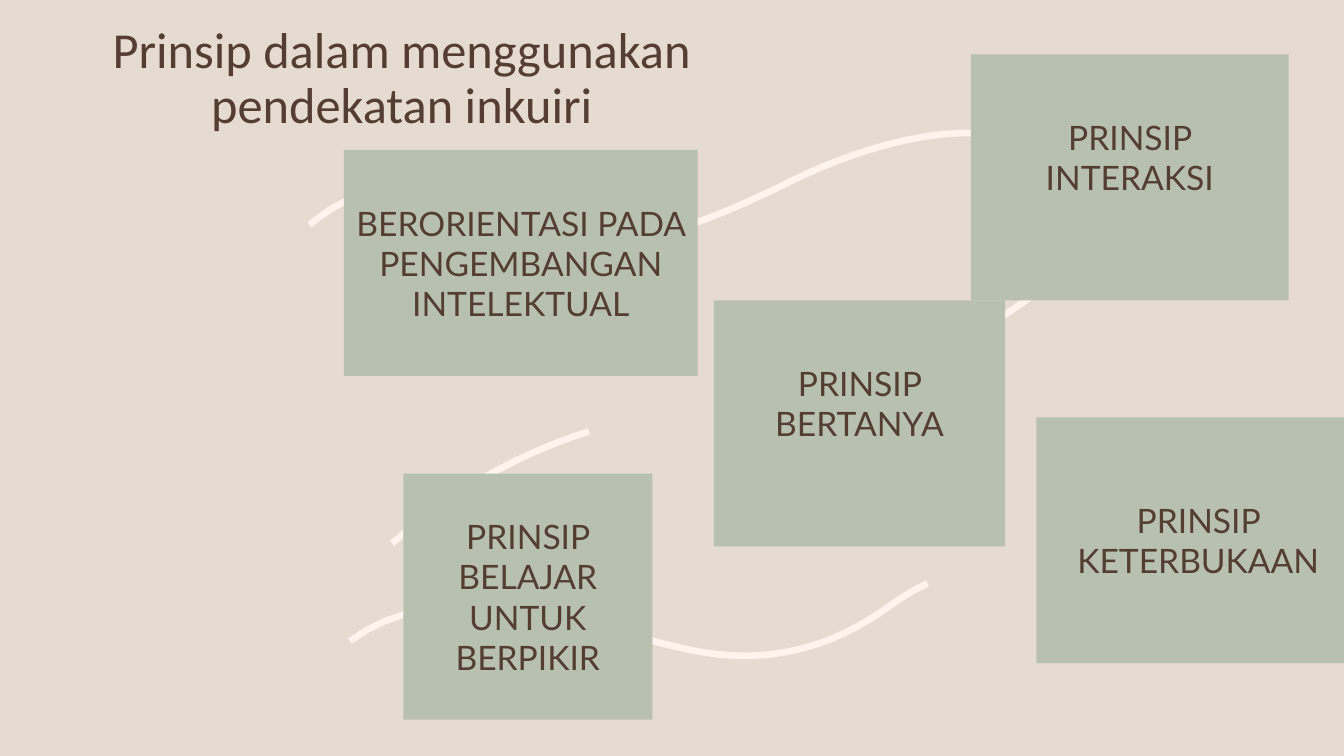
"""Build a slide of five inquiry principles on cards linked by flowing curves."""
from pptx import Presentation
from pptx.dml.color import RGBColor
from pptx.enum import shapes, text
from pptx.util import Inches, Pt

BACKGROUND, CURVE, CARD, INK = "E6DBD0", "FEF3ED", "B8C0B0", "543E34"
TITLE = "Prinsip dalam menggunakan pendekatan inkuiri"
TITLE_BOX = (0.34, 0, 7.29, 1.58)

CARDS = [
    ("BERORIENTASI PADA PENGEMBANGAN INTELEKTUAL", (3.41, 1.49, 3.51, 2.24), False),
    ("PRINSIP INTERAKSI", (9.63, 0.54, 3.15, 2.44), True),
    ("PRINSIP BERTANYA", (7.08, 2.98, 2.89, 2.44), True),
    ("PRINSIP BELAJAR UNTUK BERPIKIR", (4, 4.7, 2.47, 2.44), False),
    ("PRINSIP KETERBUKAAN", (10.28, 4.14, 3.21, 2.44), False),
]

CURVES = [
    [(8.33, 3.83), (9.13, 3.63), (9.85, 3.27), (10.47, 2.75)],
    [(5.84, 4.28), (5.09, 4.52), (4.45, 4.9), (3.89, 5.39)],
    [(3.07, 2.23), (3.5, 1.87), (3.98, 1.77), (4.49, 1.9),
     (4.66, 1.94), (4.81, 2.01), (4.97, 2.09),
     (5.3, 2.24), (5.65, 2.35), (6.04, 2.36),
     (6.37, 2.36), (6.7, 2.29), (7.01, 2.17),
     (7.37, 2.03), (7.57, 1.93), (7.78, 1.83),
     (8.01, 1.71), (9.4, 1.03), (10.27, 1.46)],
    [(9.2, 5.79), (9.04, 5.86), (8.91, 5.95), (8.77, 6.05),
     (8.48, 6.25), (8.15, 6.41), (7.78, 6.47),
     (7.46, 6.53), (7.14, 6.51), (6.81, 6.44),
     (6.45, 6.36), (6.24, 6.29), (6.02, 6.22),
     (5.78, 6.15), (4.34, 5.7), (3.47, 6.36)],
]
STEPS = 16


def rgb(value):
    return RGBColor.from_string(value)


def bezier(a, b, c, d, t):
    u = 1 - t
    return tuple(Inches(u**3 * p + 3 * u * u * t * q + 3 * u * t * t * r + t**3 * v)
                 for p, q, r, v in zip(a, b, c, d))


def add_curve(s, knots):
    points = [bezier(*knots[i:i + 4], n / STEPS)
              for i in range(0, len(knots) - 1, 3) for n in range(1, STEPS + 1)]
    x, y = knots[0]
    builder = s.shapes.build_freeform(Inches(x), Inches(y))
    builder.add_line_segments(points, close=False)
    sp = builder.convert_to_shape()
    sp.shadow.inherit = False
    sp.fill.background()
    sp.line.color.rgb = rgb(CURVE)
    sp.line.width = Pt(4.75)


def write(sp, words, font, size):
    tf = sp.text_frame
    tf.word_wrap = True
    tf.auto_size = text.MSO_AUTO_SIZE.NONE
    tf.vertical_anchor = text.MSO_ANCHOR.MIDDLE
    p = tf.paragraphs[0]
    p.alignment = text.PP_ALIGN.CENTER
    r = p.add_run()
    r.text = words
    r.font.name = font
    r.font.size = Pt(size)
    r.font.color.rgb = rgb(INK)
    return tf


def add_card(s, words, box, raised):
    sp = s.shapes.add_shape(shapes.MSO_SHAPE.RECTANGLE, *map(Inches, box))
    sp.shadow.inherit = False
    sp.fill.solid()
    sp.fill.fore_color.rgb = rgb(CARD)
    sp.line.fill.background()
    tf = write(sp, words, "Lato", 24)
    if raised:
        tf.margin_left = tf.margin_right = Inches(0.2)
        tf.margin_bottom = Inches(0.45)


def main():
    prs = Presentation()
    prs.slide_width, prs.slide_height = Inches(13.33), Inches(7.5)
    s = prs.slides.add_slide(prs.slide_layouts[5])
    s.background.fill.solid()
    s.background.fill.fore_color.rgb = rgb(BACKGROUND)
    title = s.shapes.title
    title.left, title.top, title.width, title.height = map(Inches, TITLE_BOX)
    write(title, TITLE, "Calibri", 36).paragraphs[0].line_spacing = 0.9
    for knots in CURVES:
        add_curve(s, knots)
    for card in CARDS:
        add_card(s, *card)
    prs.save("out.pptx")


if __name__ == "__main__":
    main()
